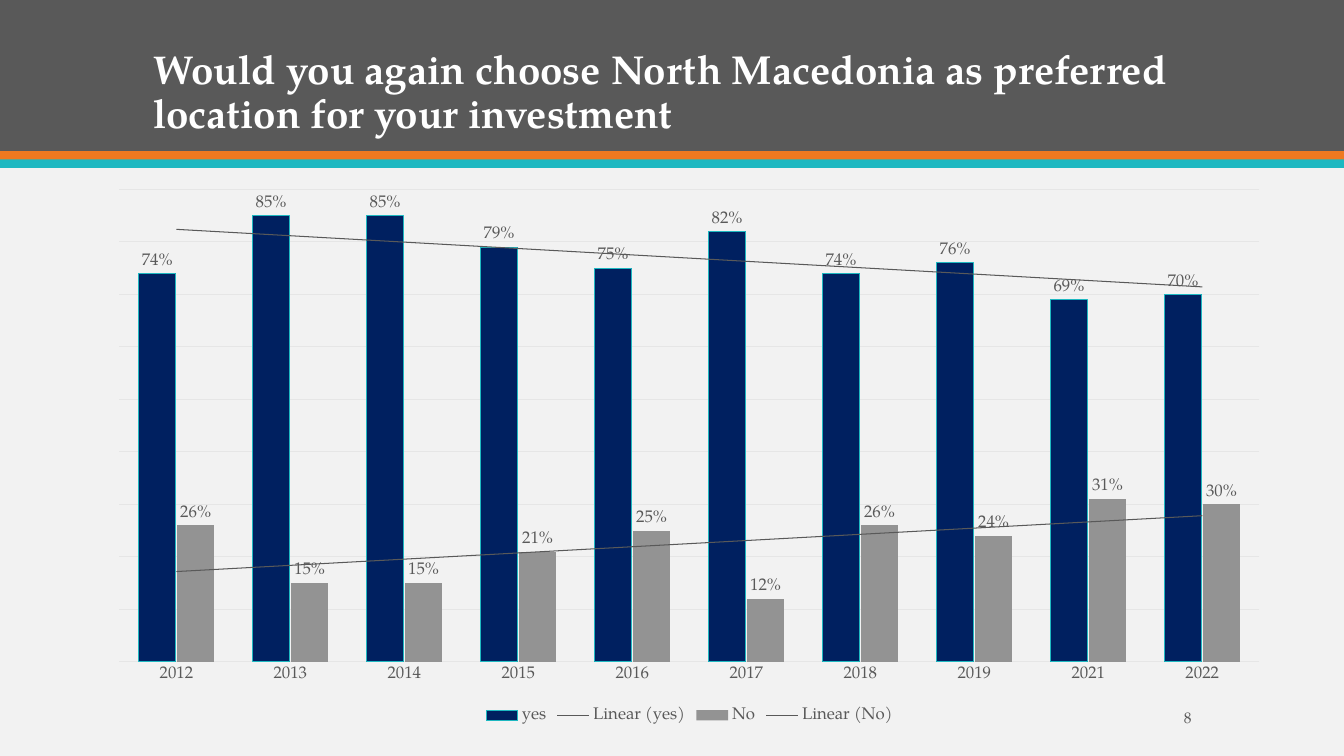
from dataclasses import dataclass

from lxml import etree
from pptx import Presentation
from pptx.chart.chart import Chart
from pptx.chart.data import CategoryChartData
from pptx.dml.color import RGBColor
from pptx.enum.chart import XL_CHART_TYPE, XL_LABEL_POSITION, XL_LEGEND_POSITION, XL_TICK_MARK
from pptx.enum.shapes import MSO_SHAPE
from pptx.enum.text import MSO_ANCHOR, PP_ALIGN
from pptx.oxml import parse_xml
from pptx.oxml.ns import nsdecls, qn
from pptx.slide import Slide
from pptx.util import Pt

COLUMNS = XL_CHART_TYPE.COLUMN_CLUSTERED
OUTSIDE_END = XL_LABEL_POSITION.OUTSIDE_END
LEGEND_BOTTOM = XL_LEGEND_POSITION.BOTTOM
NO_TICK = XL_TICK_MARK.NONE
RECTANGLE = MSO_SHAPE.RECTANGLE
BOTTOM, MIDDLE = MSO_ANCHOR.BOTTOM, MSO_ANCHOR.MIDDLE
LEFT, RIGHT = PP_ALIGN.LEFT, PP_ALIGN.RIGHT

FONT = "TeX Gyre Pagella"
SLIDE_WIDTH, SLIDE_HEIGHT = 960, 540
GREY, ORANGE, TEAL = "595959", "EF7920", "1EB8C1"
WHITE, GRID, BACKGROUND = "FFFFFF", "E6E6E6", "F2F2F2"
YEARS = ("2012", "2013", "2014", "2015", "2016", "2017", "2018", "2019", "2021", "2022")
PLOT_LAYOUT = {"x": 0.02, "y": 0.02, "w": 0.96, "h": 0.86}


@dataclass(frozen=True)
class Band:
    top: float
    height: float
    color: str


@dataclass(frozen=True)
class Label:
    text: str
    left: float
    top: float
    width: float
    height: float
    size: float
    color: str
    bold: bool
    anchor: MSO_ANCHOR
    alignment: PP_ALIGN
    line_spacing: float


@dataclass(frozen=True)
class Answer:
    name: str
    percentages: tuple[int, ...]
    color: str
    outline: str | None


BANDS = (
    Band(0, 108, GREY),
    Band(108, 6.2, ORANGE),
    Band(113.8, 6.2, TEAL),
)
LABELS = (
    Label("Would you again choose North Macedonia as preferred location for your investment",
          102.24, 20.16, 756, 81.36, 28.8, WHITE, True, BOTTOM, LEFT, 0.9),
    Label("8", 750.24, 501.84, 108, 21.6, 11, GREY, False, MIDDLE, RIGHT, 1.0),
)
ANSWERS = (
    Answer("yes", (74, 85, 85, 79, 75, 82, 74, 76, 69, 70), "002060", TEAL),
    Answer("No", (26, 15, 15, 21, 25, 12, 26, 24, 31, 30), "939393", None),
)


def rgb(color: str) -> RGBColor:
    return RGBColor.from_string(color)


def set_values(target: object, values: dict) -> None:
    for name, value in values.items():
        setattr(target, name, value)


def set_font(font: object, size: float, color: str, bold: bool = False) -> None:
    set_values(font, {"name": FONT, "size": Pt(size), "bold": bold})
    font.color.rgb = rgb(color)


def set_line(line: object, color: str) -> None:
    line.color.rgb = rgb(color)
    line.width = Pt(0.75)


def add_band(slide: Slide, band: Band) -> None:
    shape = slide.shapes.add_shape(
        RECTANGLE, Pt(0), Pt(band.top), Pt(SLIDE_WIDTH), Pt(band.height))
    shape.shadow.inherit = False
    shape.fill.solid()
    shape.fill.fore_color.rgb = rgb(band.color)
    shape.line.fill.background()


def add_label(slide: Slide, label: Label) -> None:
    box = slide.shapes.add_textbox(
        Pt(label.left), Pt(label.top), Pt(label.width), Pt(label.height))
    set_values(box.text_frame, {"word_wrap": True, "vertical_anchor": label.anchor})
    paragraph = box.text_frame.paragraphs[0]
    set_values(paragraph, {"alignment": label.alignment, "line_spacing": label.line_spacing})
    run = paragraph.add_run()
    run.text = label.text
    set_font(run.font, label.size, label.color, label.bold)


def set_plot_layout(chart: Chart) -> None:
    """Fix the inner plot area as fractions of the chart frame."""
    plot_area = chart.plots[0]._element.getparent()
    for layout in plot_area.findall(qn("c:layout")):
        plot_area.remove(layout)
    layout = etree.Element(qn("c:layout"))
    manual = etree.SubElement(layout, qn("c:manualLayout"))
    settings = {"layoutTarget": "inner", "xMode": "edge", "yMode": "edge", **PLOT_LAYOUT}
    for name, value in settings.items():
        etree.SubElement(manual, qn(f"c:{name}")).set("val", str(value))
    plot_area.insert(0, layout)


def add_trend_line(series: object) -> None:
    trend_line = parse_xml(
        f'<c:trendline {nsdecls("c", "a")}>'
        f'<c:spPr><a:ln w="{Pt(0.75)}"><a:solidFill><a:srgbClr val="{GREY}"/></a:solidFill></a:ln></c:spPr>'
        '<c:trendlineType val="linear"/><c:dispRSqr val="0"/><c:dispEq val="0"/>'
        '</c:trendline>')
    series._element.find(qn("c:cat")).addprevious(trend_line)


def format_series(series: object, answer: Answer) -> None:
    series.invert_if_negative = False
    series.format.fill.solid()
    series.format.fill.fore_color.rgb = rgb(answer.color)
    if answer.outline:
        set_line(series.format.line, answer.outline)
    else:
        series.format.line.fill.background()
    set_values(series.data_labels, {
        "show_value": True, "position": OUTSIDE_END,
        "number_format": '0"%"', "number_format_is_linked": False})
    set_font(series.data_labels.font, 12, GREY)
    add_trend_line(series)


def add_answer_chart(slide: Slide) -> None:
    data = CategoryChartData()
    data.categories = YEARS
    for answer in ANSWERS:
        data.add_series(answer.name, answer.percentages)
    chart = slide.shapes.add_chart(
        COLUMNS, Pt(68.4), Pt(127.44), Pt(848.16), Pt(392.4), data).chart
    set_font(chart.font, 10, GREY)
    set_values(chart, {"has_title": False, "has_legend": True})
    set_values(chart.legend, {"position": LEGEND_BOTTOM, "include_in_layout": False})
    set_font(chart.legend.font, 12, GREY)

    plot = chart.plots[0]
    set_values(plot, {"gap_width": 102, "overlap": -3, "vary_by_categories": False})
    for series, answer in zip(plot.series, ANSWERS):
        format_series(series, answer)

    set_values(chart.category_axis, {"major_tick_mark": NO_TICK, "minor_tick_mark": NO_TICK})
    set_font(chart.category_axis.tick_labels.font, 12, GREY)
    set_line(chart.category_axis.format.line, GRID)
    set_values(chart.value_axis, {
        "minimum_scale": 0, "maximum_scale": 90, "major_unit": 10,
        "has_major_gridlines": True, "visible": False})
    set_line(chart.value_axis.major_gridlines.format.line, GRID)
    set_plot_layout(chart)


def main() -> None:
    presentation = Presentation()
    set_values(presentation, {"slide_width": Pt(SLIDE_WIDTH), "slide_height": Pt(SLIDE_HEIGHT)})
    slide = presentation.slides.add_slide(presentation.slide_layouts[6])
    slide.background.fill.solid()
    slide.background.fill.fore_color.rgb = rgb(BACKGROUND)
    for band in BANDS:
        add_band(slide, band)
    add_answer_chart(slide)
    for label in LABELS:
        add_label(slide, label)
    presentation.save("out.pptx")


if __name__ == "__main__":
    main()
